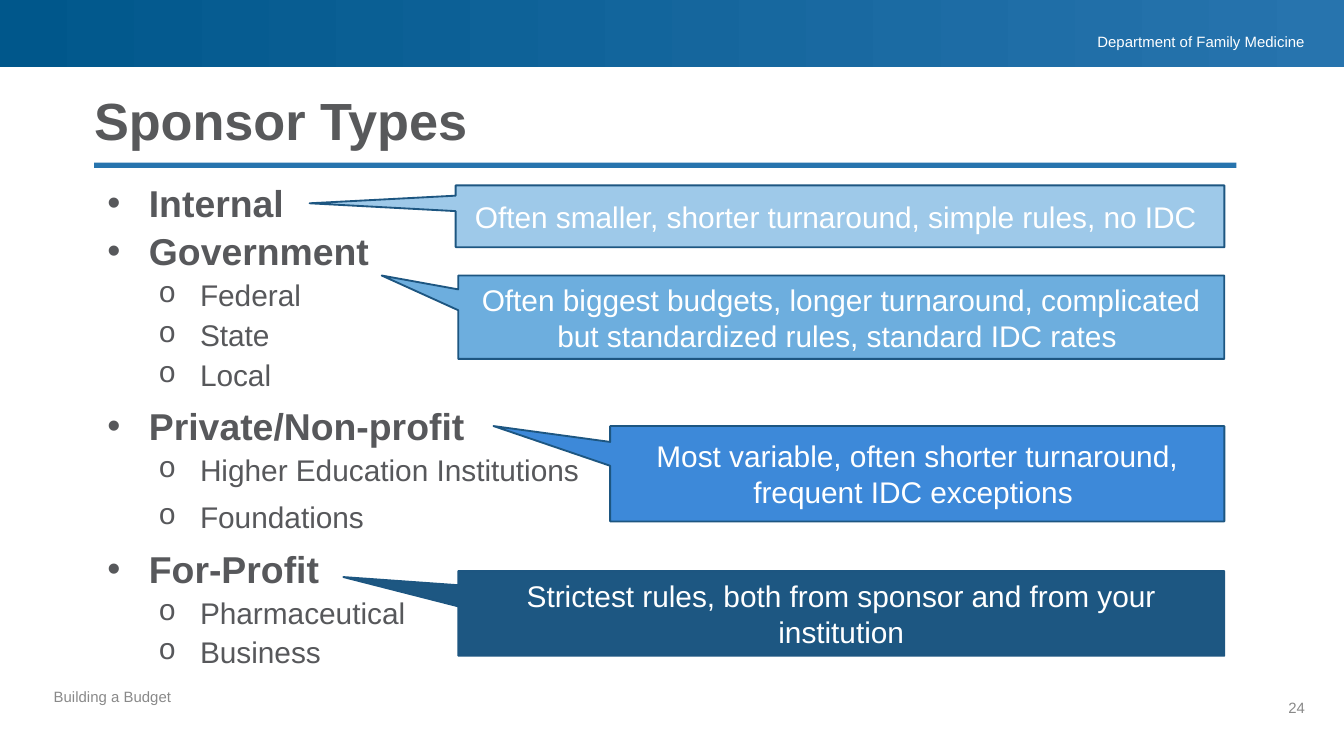
"""Build the Sponsor Types slide."""
import pptx
import pptx.dml.color
import pptx.enum.shapes
import pptx.enum.text
import pptx.oxml
import pptx.oxml.ns
import pptx.util

Inches = pptx.util.Inches
Pt = pptx.util.Pt
RGBColor = pptx.dml.color.RGBColor
Shapes = pptx.enum.shapes.MSO_SHAPE
Align = pptx.enum.text.PP_ALIGN
Anchor = pptx.enum.text.MSO_ANCHOR

WHITE = RGBColor(0xFF, 0xFF, 0xFF)
GRAY = RGBColor(0x89, 0x89, 0x89)
TITLE = RGBColor(0x58, 0x59, 0x5B)
BODY = RGBColor(0x57, 0x58, 0x5B)
DEEP_BLUE = RGBColor(0x00, 0x57, 0x8B)
BLUE = RGBColor(0x27, 0x74, 0xAE)
OUTLINE = RGBColor(0x1D, 0x56, 0x81)
CALLOUT_RIGHT = 9.11

SPONSORS = [
    ("Internal", 0, 2),
    ("Government", 0, 2),
    ("Federal", 1, 2),
    ("State", 1, 2),
    ("Local", 1, 6),
    ("Private/Non-profit", 0, 2),
    ("Higher Education Institutions", 1, 6),
    ("Foundations", 1, 6),
    ("For-Profit", 0, 2),
    ("Pharmaceutical", 1, 2),
    ("Business", 1, 6),
]

CALLOUTS = [
    ("Often smaller, shorter turnaround, simple rules, no IDC ",
     1.38, 5.72, 0.46, (-0.69, -0.21), RGBColor(0x9E, 0xC9, 0xE9)),
    ("Often biggest budgets, longer turnaround, complicated but standardized rules, standard IDC rates ",
     2.05, 5.7, 0.62, (-0.6, -0.5), RGBColor(0x6D, 0xAE, 0xDE)),
    ("Most variable, often shorter turnaround, frequent IDC exceptions ",
     3.17, 4.57, 0.71, (-0.69, -0.5), RGBColor(0x3D, 0x89, 0xD9)),
    ("Strictest rules, both from sponsor and from your institution",
     4.25, 5.7, 0.63, (-0.65, -0.43), RGBColor(0x1D, 0x57, 0x82)),
]


def write(paragraph, text, size, color, bold=False, align=Align.LEFT, spacing=None):
    """Fill a paragraph with formatted text."""
    paragraph.text = text
    paragraph.alignment = align
    if spacing:
        paragraph.line_spacing = spacing
    paragraph.font.name = "Arial"
    paragraph.font.size = Pt(size)
    paragraph.font.bold = bold
    paragraph.font.color.rgb = color


def add_bullet(paragraph, character, font, margin):
    """Give a paragraph a hanging bullet."""
    properties = paragraph._p.get_or_add_pPr()
    properties.set("marL", str(Inches(margin)))
    properties.set("indent", str(Inches(-0.31)))
    namespace = pptx.oxml.ns.nsdecls("a")
    for markup in (f'<a:buFont {namespace} typeface="{font}"/>',
                   f'<a:buChar {namespace} char="{character}"/>'):
        properties.append(pptx.oxml.parse_xml(markup))


class SlideBuilder:
    """Hold the current slide and add styled elements to it."""

    def __init__(self, slide):
        self.slide = slide

    def shape(self, kind, left, top, width, height, fill=None):
        """Add a preset shape without shadow or outline."""
        shape = self.slide.shapes.add_shape(
            kind, Inches(left), Inches(top), Inches(width), Inches(height))
        shape.shadow.inherit = False
        shape.line.fill.background()
        if fill is not None:
            shape.fill.solid()
            shape.fill.fore_color.rgb = fill
        return shape

    def banner(self, left, top, width, height, colors):
        """Add a bar with a left-to-right gradient."""
        shape = self.shape(Shapes.RECTANGLE, left, top, width, height)
        shape.fill.gradient()
        shape.fill.gradient_angle = 0
        for stop, color, position in zip(shape.fill.gradient_stops, colors, (0, 1)):
            stop.color.rgb = color
            stop.position = position

    def frame(self, left, top, width, height, insets=(0.1, 0.05, 0.1, 0.05)):
        """Add a wrapping text box and return its text frame."""
        box = self.slide.shapes.add_textbox(
            Inches(left), Inches(top), Inches(width), Inches(height))
        frame = box.text_frame
        frame.word_wrap = True
        (frame.margin_left, frame.margin_top,
         frame.margin_right, frame.margin_bottom) = map(Inches, insets)
        return frame

    def label(self, text, left, top, width, height, insets=(0, 0, 0, 0),
              anchor=Anchor.TOP, **style):
        """Add a text box with one paragraph."""
        frame = self.frame(left, top, width, height, insets)
        frame.vertical_anchor = anchor
        write(frame.paragraphs[0], text, **style)

    def outline(self, items, left, top, width, height):
        """Add a two-level bulleted list."""
        frame = self.frame(left, top, width, height)
        for index, (text, level, space_after) in enumerate(items):
            paragraph = frame.add_paragraph() if index else frame.paragraphs[0]
            paragraph.level = level
            paragraph.space_after = Pt(space_after)
            if level:
                add_bullet(paragraph, "o", "Courier New", 0.69)
                write(paragraph, text, 16, BODY)
            else:
                add_bullet(paragraph, "•", "Arial", 0.31)
                write(paragraph, text, 20, BODY, bold=True)

    def callout(self, text, top, width, height, tip, fill):
        """Add a right-aligned callout whose tip points at its sponsor."""
        shape = self.shape(Shapes.RECTANGULAR_CALLOUT, CALLOUT_RIGHT - width,
                           top, width, height, fill)
        shape.adjustments[0], shape.adjustments[1] = tip
        shape.line.color.rgb = OUTLINE
        shape.line.width = Pt(1)
        frame = shape.text_frame
        frame.word_wrap = True
        frame.vertical_anchor = Anchor.MIDDLE
        write(frame.paragraphs[0], text, 16, WHITE, align=Align.CENTER)


def main():
    """Build and save the presentation."""
    presentation = pptx.Presentation()
    presentation.slide_width = Inches(10)
    presentation.slide_height = Inches(10) * 9 // 16
    builder = SlideBuilder(presentation.slides.add_slide(presentation.slide_layouts[6]))

    builder.shape(Shapes.RECTANGLE, 0.7, 1.21, 8.5, 0.04, BLUE)
    builder.banner(0, 0, 10, 0.5, (DEEP_BLUE, BLUE))
    builder.label("Department of Family Medicine", 7.2, 0.23, 2.51, 0.14,
                  insets=(0.1, 0.01, 0, 0.01), size=8, color=WHITE, align=Align.RIGHT)
    builder.label("Building a Budget", 0.4, 5.21, 3.9, 0.4,
                  insets=(0, 0, 0, 0.28), size=8, color=GRAY, spacing=0.9)
    builder.label("24", 9.21, 5.27, 0.5, 0.4,
                  insets=(0, 0, 0, 0.28), size=8, color=GRAY, align=Align.RIGHT)
    builder.label("Sponsor Types", 0.7, 0.7, 8.5, 0.43, anchor=Anchor.BOTTOM,
                  size=28, color=TITLE, bold=True, spacing=0.9)
    builder.outline(SPONSORS, 0.7, 1.29, 8.5, 3.78)
    for callout in CALLOUTS:
        builder.callout(*callout)

    presentation.save("out.pptx")


if __name__ == "__main__":
    main()
